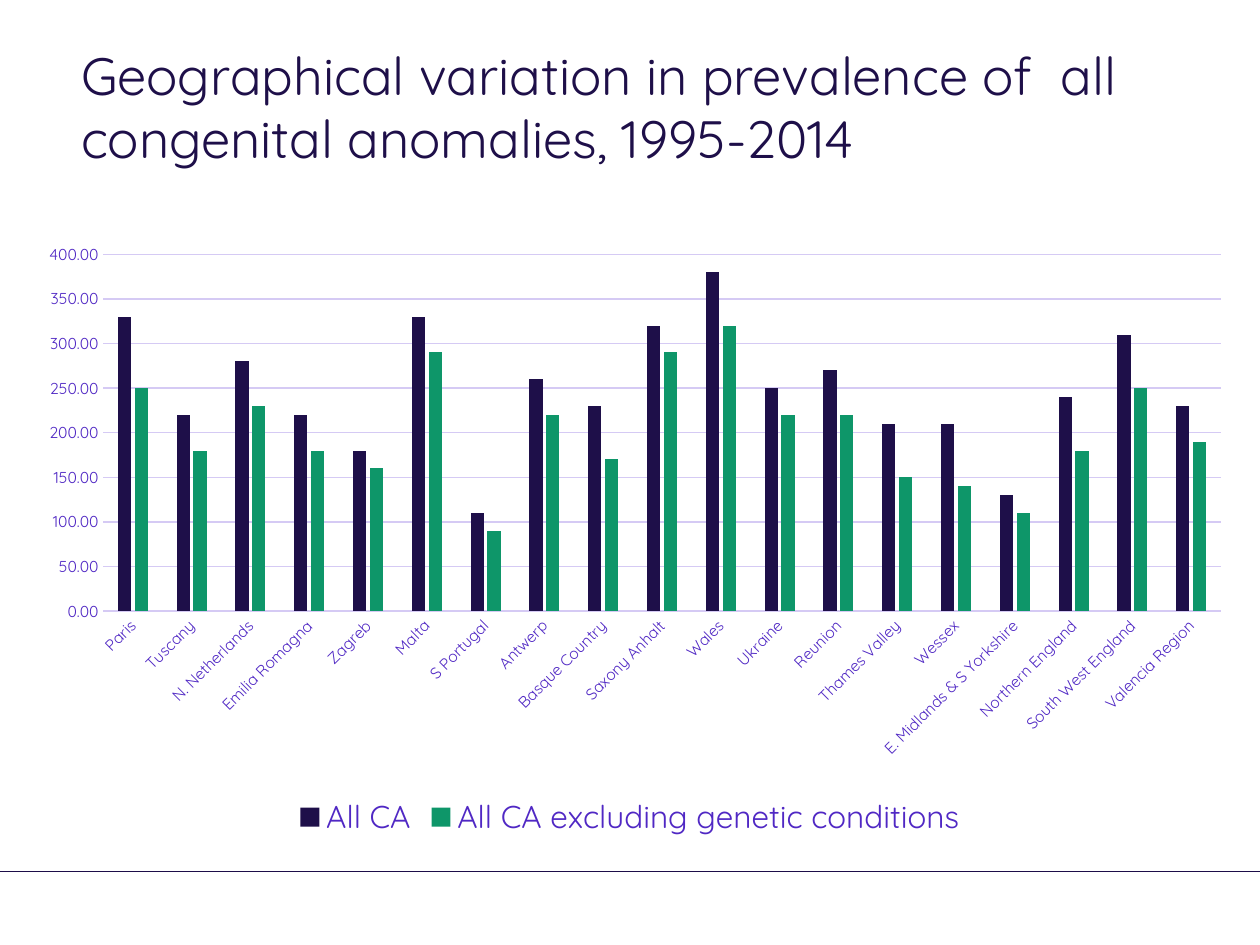
from lxml.etree import SubElement
from pptx import Presentation
from pptx.chart.data import CategoryChartData
from pptx.dml.color import RGBColor
from pptx.enum.chart import XL_CHART_TYPE, XL_LEGEND_POSITION, XL_TICK_MARK
from pptx.enum.shapes import MSO_CONNECTOR
from pptx.enum.text import MSO_ANCHOR, PP_ALIGN
from pptx.oxml.ns import qn
from pptx.util import Cm, Pt

COLORS = {"navy": "1E0F49", "green": "0E9669", "violet": "5028C4",
          "lilac": "D5CAF4", "rule": "1D0D49"}
FONT = "Quicksand"
PREVALENCE = [
    ("Paris", 330, 250),
    ("Tuscany", 220, 180),
    ("N. Netherlands", 280, 230),
    ("Emilia Romagna", 220, 180),
    ("Zagreb", 180, 160),
    ("Malta", 330, 290),
    ("S Portugal", 110, 90),
    ("Antwerp", 260, 220),
    ("Basque Country", 230, 170),
    ("Saxony Anhalt", 320, 290),
    ("Wales", 380, 320),
    ("Ukraine", 250, 220),
    ("Reunion", 270, 220),
    ("Thames Valley", 210, 150),
    ("Wessex", 210, 140),
    ("E. Midlands & S Yorkshire", 130, 110),
    ("Northern England", 240, 180),
    ("South West England", 310, 250),
    ("Valencia Region", 230, 190),
]
SERIES = [("All CA", "navy"), ("All CA excluding genetic conditions", "green")]


def rgb(name):
    return RGBColor.from_string(COLORS[name])


def apply(obj, **values):
    for name, value in values.items():
        setattr(obj, name, value)


def style_font(font, size, color):
    apply(font, name=FONT, size=Pt(size), bold=False)
    font.color.rgb = rgb(color)


def style_line(line, color, width):
    line.color.rgb = rgb(color)
    line.width = Pt(width)


def add_title(s, text):
    sp = s.shapes.title
    apply(sp, left=Cm(1.38), top=Cm(0.74), width=Cm(22.91), height=Cm(3.1))
    tf = sp.text_frame
    apply(tf, text=text, word_wrap=True, vertical_anchor=MSO_ANCHOR.TOP)
    p = tf.paragraphs[0]
    apply(p, alignment=PP_ALIGN.LEFT, line_spacing=1.0)
    style_font(p.runs[0].font, 30, "navy")


def add_rule(s, top, width):
    line = s.shapes.add_connector(MSO_CONNECTOR.STRAIGHT, 0, top, width, top)
    style_line(line.line, "rule", 0.25)
    SubElement(line._element.spPr, qn("a:effectLst"))


def set_plot_layout(chart, **box):
    area = chart._chartSpace.chart.plotArea
    layout = area.find(qn("c:layout"))
    if layout is None:
        layout = SubElement(area, qn("c:layout"))
        area.insert(0, layout)
    manual = SubElement(layout, qn("c:manualLayout"))
    values = {"layoutTarget": "inner", "xMode": "edge", "yMode": "edge", **box}
    for name, value in values.items():
        SubElement(manual, qn(f"c:{name}")).set("val", str(value))


def style_axes(chart):
    for axis in (chart.category_axis, chart.value_axis):
        apply(axis, major_tick_mark=XL_TICK_MARK.NONE,
              minor_tick_mark=XL_TICK_MARK.NONE)
        style_font(axis.tick_labels.font, 9, "violet")
    cat, val = chart.category_axis, chart.value_axis
    style_line(cat.format.line, "lilac", 0.75)
    cat._element.txPr.find(qn("a:bodyPr")).set("rot", "-2700000")
    apply(val, minimum_scale=0, maximum_scale=400, major_unit=50,
          has_major_gridlines=True)
    val.format.line.fill.background()
    style_line(val.major_gridlines.format.line, "lilac", 0.75)
    apply(val.tick_labels, number_format="0.00", number_format_is_linked=False)


def add_prevalence_chart(s):
    regions, *columns = zip(*PREVALENCE)
    data = CategoryChartData()
    data.categories = regions
    for (name, _), values in zip(SERIES, columns):
        data.add_series(name, values)
    chart = s.shapes.add_chart(XL_CHART_TYPE.COLUMN_CLUSTERED, Cm(0.5), Cm(4.91),
                               Cm(24.4), Cm(12.09), data).chart
    apply(chart, has_title=False, has_legend=True)
    style_font(chart.font, 10, "navy")
    plot = chart.plots[0]
    apply(plot, gap_width=219, overlap=-27, vary_by_categories=False)
    for series, (_, color) in zip(plot.series, SERIES):
        series.format.fill.solid()
        series.format.fill.fore_color.rgb = rgb(color)
    style_axes(chart)
    apply(chart.legend, position=XL_LEGEND_POSITION.BOTTOM, include_in_layout=False)
    style_font(chart.legend.font, 18, "violet")
    set_plot_layout(chart, x=0.065, y=0.018, w=0.923, h=0.595)


def main():
    prs = Presentation()
    apply(prs, slide_width=Cm(25.4), slide_height=Cm(19.05))
    s = prs.slides.add_slide(prs.slide_layouts[5])
    add_rule(s, Cm(17.57), prs.slide_width)
    add_title(s, "Geographical variation in prevalence of  all "
                 "congenital anomalies, 1995-2014")
    add_prevalence_chart(s)
    prs.save("out.pptx")


if __name__ == "__main__":
    main()
